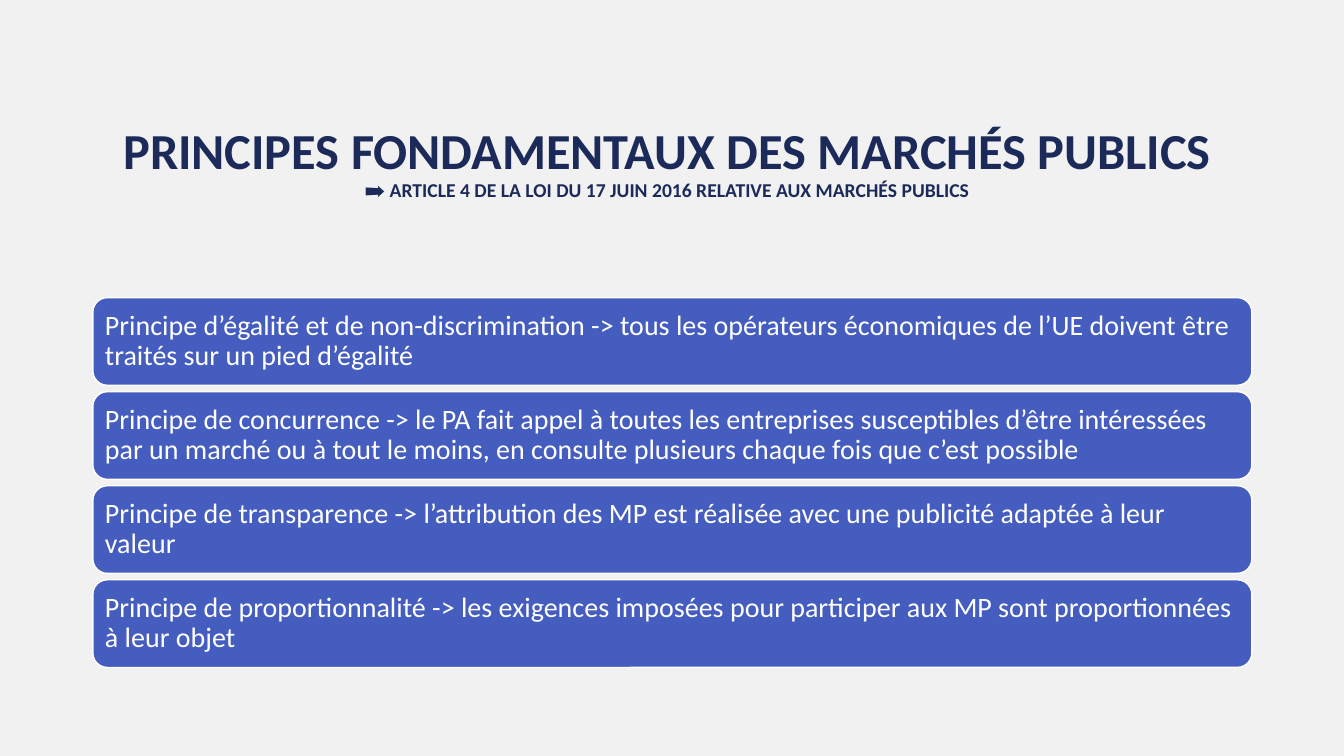
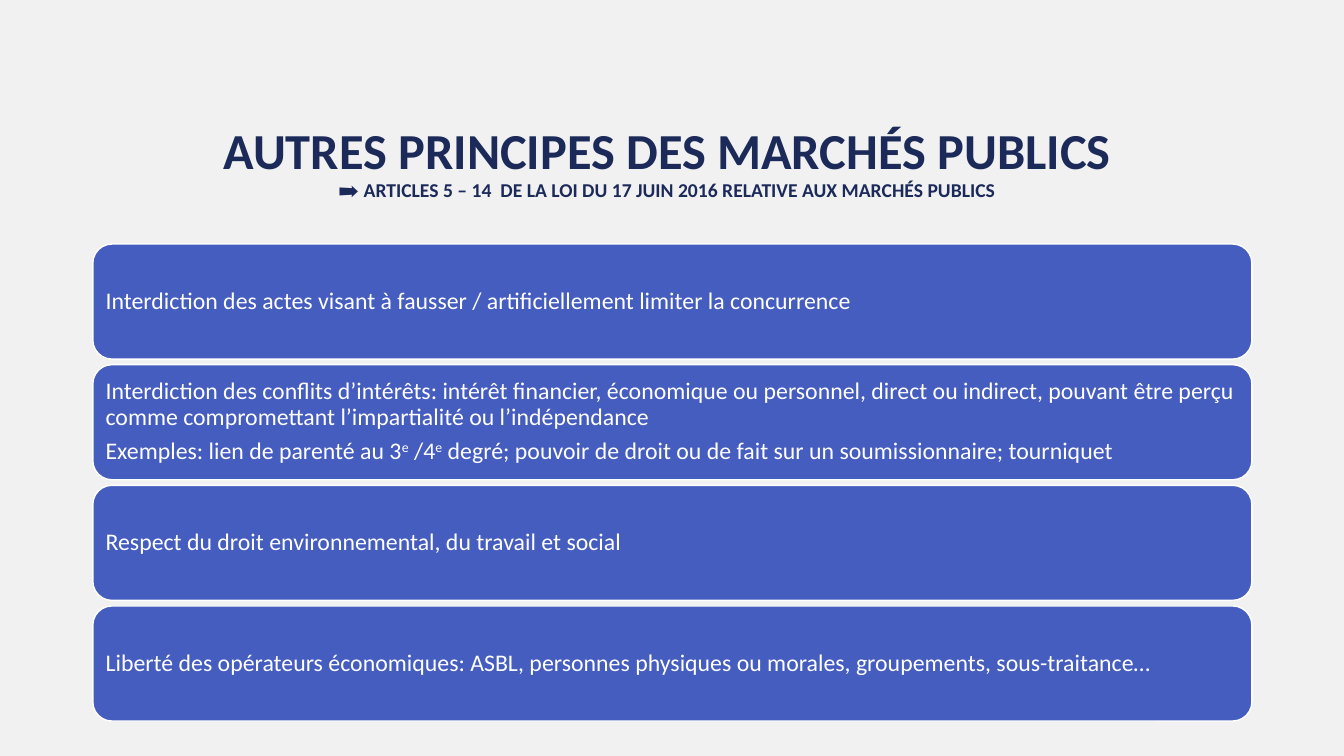
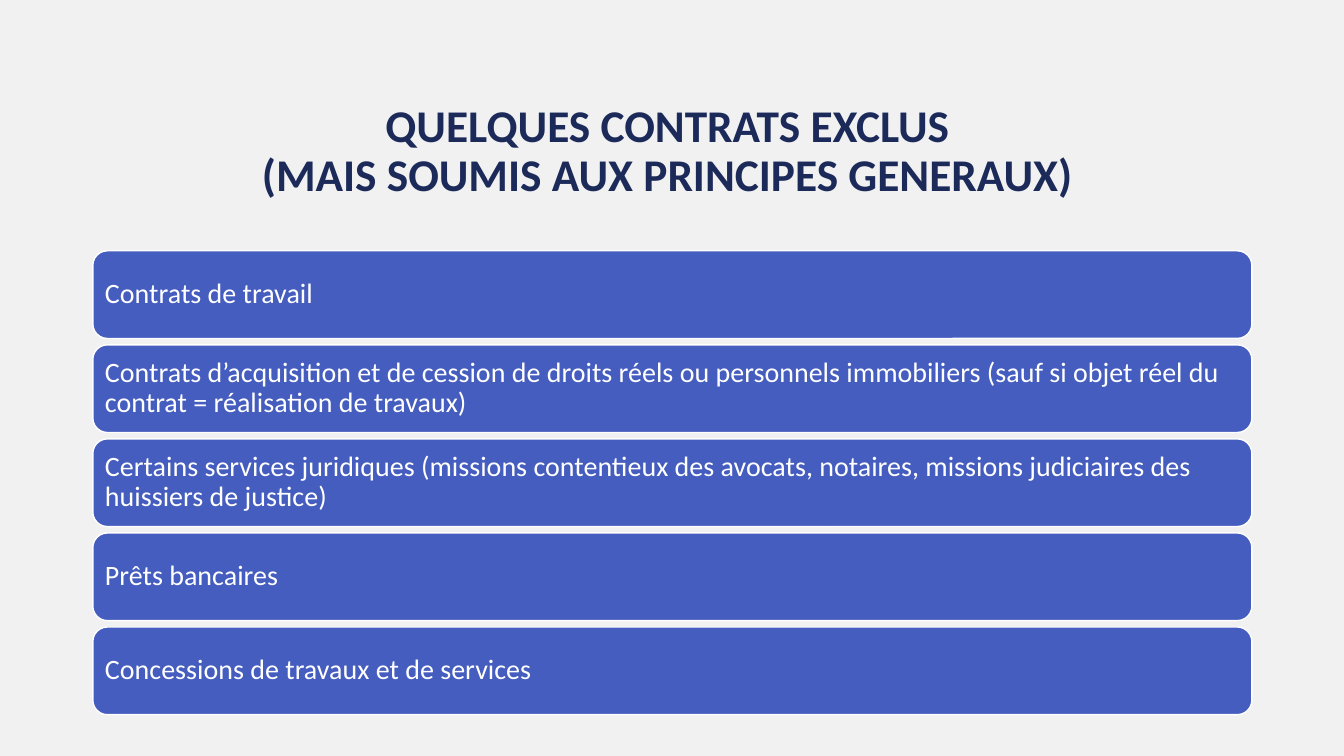
from copy import deepcopy

from pptx import Presentation
from pptx.dml.color import RGBColor
from pptx.enum.shapes import MSO_SHAPE
from pptx.enum.text import MSO_ANCHOR, MSO_AUTO_SIZE, PP_ALIGN
from pptx.util import Cm, Pt

ROUND = MSO_SHAPE.ROUNDED_RECTANGLE
MIDDLE, BOTTOM = MSO_ANCHOR.MIDDLE, MSO_ANCHOR.BOTTOM
LEFT, CENTER = PP_ALIGN.LEFT, PP_ALIGN.CENTER
FIXED = MSO_AUTO_SIZE.NONE

FONT = "Calibri"
PAPER, NAVY, BLUE, WHITE = "F1F1F1", "1C2A5A", "455DBE", "FFFFFF"
EDGE, WIDE = 2.34, 29.21

# Title lines hold (text, size, bold) runs. Each bar is a list of paragraphs,
# and a paragraph is a list of runs, where "^" marks a superscript.
SLIDES = [
    {
        "title": [
            [("PRINCIPES FONDAMENTAUX DES MARCHÉS PUBLICS", 36, True)],
            [("➡ ", 14, False),
             ("ARTICLE 4 DE LA LOI DU 17 JUIN 2016 RELATIVE AUX MARCHÉS PUBLICS", 14, True)],
        ],
        "top": 7.5, "high": 2.21, "gap": 0.16, "inset": 0.2, "size": 20,
        "bars": [
            [["Principe d’égalité et de non-discrimination -> tous les opérateurs "
              "économiques de l’UE doivent être traités sur un pied d’égalité"]],
            [["Principe de concurrence -> le PA fait appel à toutes les entreprises "
              "susceptibles d’être intéressées par un marché ou à tout le moins, "
              "en consulte plusieurs chaque fois que c’est possible"]],
            [["Principe de transparence -> l’attribution des MP est réalisée avec "
              "une publicité adaptée à leur valeur"]],
            [["Principe de proportionnalité -> les exigences imposées pour participer "
              "aux MP sont proportionnées à leur objet"]],
        ],
    },
    {
        "title": [
            [("AUTRES PRINCIPES DES MARCHÉS PUBLICS", 36, True)],
            [("➡ ", 14, False),
             ("ARTICLES 5 – 14  DE LA LOI DU 17 JUIN 2016 RELATIVE AUX MARCHÉS PUBLICS", 14, True)],
        ],
        "top": 6.15, "high": 2.9, "gap": 0.14, "inset": 0.18, "size": 17,
        "bars": [
            [["Interdiction des actes visant à fausser / artificiellement limiter "
              "la concurrence"]],
            [["Interdiction des conflits d’intérêts: intérêt financier, économique ou "
              "personnel, direct ou indirect, pouvant être perçu comme compromettant "
              "l’impartialité ou l’indépendance"],
             ["Exemples: lien de parenté au 3", "^e", " /4", "^e",
              " degré; pouvoir de droit ou de fait sur un soumissionnaire; tourniquet"]],
            [["Respect du droit environnemental, du travail et social"]],
            [["Liberté des opérateurs économiques: ASBL, personnes physiques ou morales, "
              "groupements, sous-traitance…"]],
        ],
    },
    {
        "title": [
            [("QUELQUES CONTRATS EXCLUS", 32.4, True)],
            [("(MAIS SOUMIS AUX PRINCIPES GENERAUX)", 32.4, True)],
        ],
        "top": 6.32, "high": 2.21, "gap": 0.16, "inset": 0.2, "size": 20,
        "bars": [
            [["Contrats de travail"]],
            [["Contrats d’acquisition et de cession de droits réels ou personnels "
              "immobiliers (sauf si objet réel du contrat = réalisation de travaux)"]],
            [["Certains services juridiques (missions contentieux des avocats, notaires, "
              "missions judiciaires des huissiers de justice)"]],
            [["Prêts bancaires"]],
            [["Concessions de travaux et de services"]],
        ],
    },
]


def color(code):
    return RGBColor.from_string(code)


def add_run(para, text, size, code, bold=False):
    run = para.add_run()
    run.text = text
    font = run.font
    font.name, font.size, font.bold = FONT, Pt(size), bold
    font.color.rgb = color(code)
    return run


def set_frame(frame, anchor, insets):
    """Insets are left, top, right and bottom, in centimetres."""
    frame.word_wrap = True
    frame.auto_size = FIXED
    frame.vertical_anchor = anchor
    (frame.margin_left, frame.margin_top,
     frame.margin_right, frame.margin_bottom) = map(Cm, insets)


def set_title(shape, lines):
    shape.left, shape.top = Cm(EDGE), Cm(2.34)
    shape.width, shape.height = Cm(WIDE), Cm(3.25)
    set_frame(shape.text_frame, BOTTOM, (0, 0.13, 0.25, 0.51))
    para = shape.text_frame.paragraphs[0]
    para.alignment, para.line_spacing = CENTER, 0.9
    for row, line in enumerate(lines):
        if row:
            # The break takes the size of the line that it ends
            para.add_line_break()
            para._p[-1].append(deepcopy(run._r.rPr))
        for text, size, bold in line:
            run = add_run(para, text, size, NAVY, bold)


def add_bar(slide, top, data, paras):
    bar = slide.shapes.add_shape(ROUND, Cm(EDGE), Cm(top), Cm(WIDE), Cm(data["high"]))
    bar.shadow.inherit = False
    bar.fill.solid()
    bar.fill.fore_color.rgb = color(BLUE)
    bar.line.color.rgb = color(WHITE)
    bar.line.width = Pt(1)
    frame = bar.text_frame
    set_frame(frame, MIDDLE, [data["inset"]] * 4)
    for row, parts in enumerate(paras):
        para = frame.add_paragraph() if row else frame.paragraphs[0]
        para.alignment, para.line_spacing = LEFT, 0.9
        if row:
            para.space_before = Pt(6)
        for text in parts:
            run = add_run(para, text.lstrip("^"), data["size"], WHITE)
            if text.startswith("^"):
                run._r.rPr.set("baseline", "30000")


def main():
    deck = Presentation()
    deck.slide_width, deck.slide_height = Cm(33.87), Cm(19.05)
    paper = deck.slide_master.background.fill
    paper.solid()
    paper.fore_color.rgb = color(PAPER)
    for data in SLIDES:
        slide = deck.slides.add_slide(deck.slide_layouts[5])
        set_title(slide.shapes.title, data["title"])
        for row, paras in enumerate(data["bars"]):
            top = data["top"] + row * (data["high"] + data["gap"])
            add_bar(slide, top, data, paras)
    deck.save("out.pptx")


if __name__ == "__main__":
    main()
